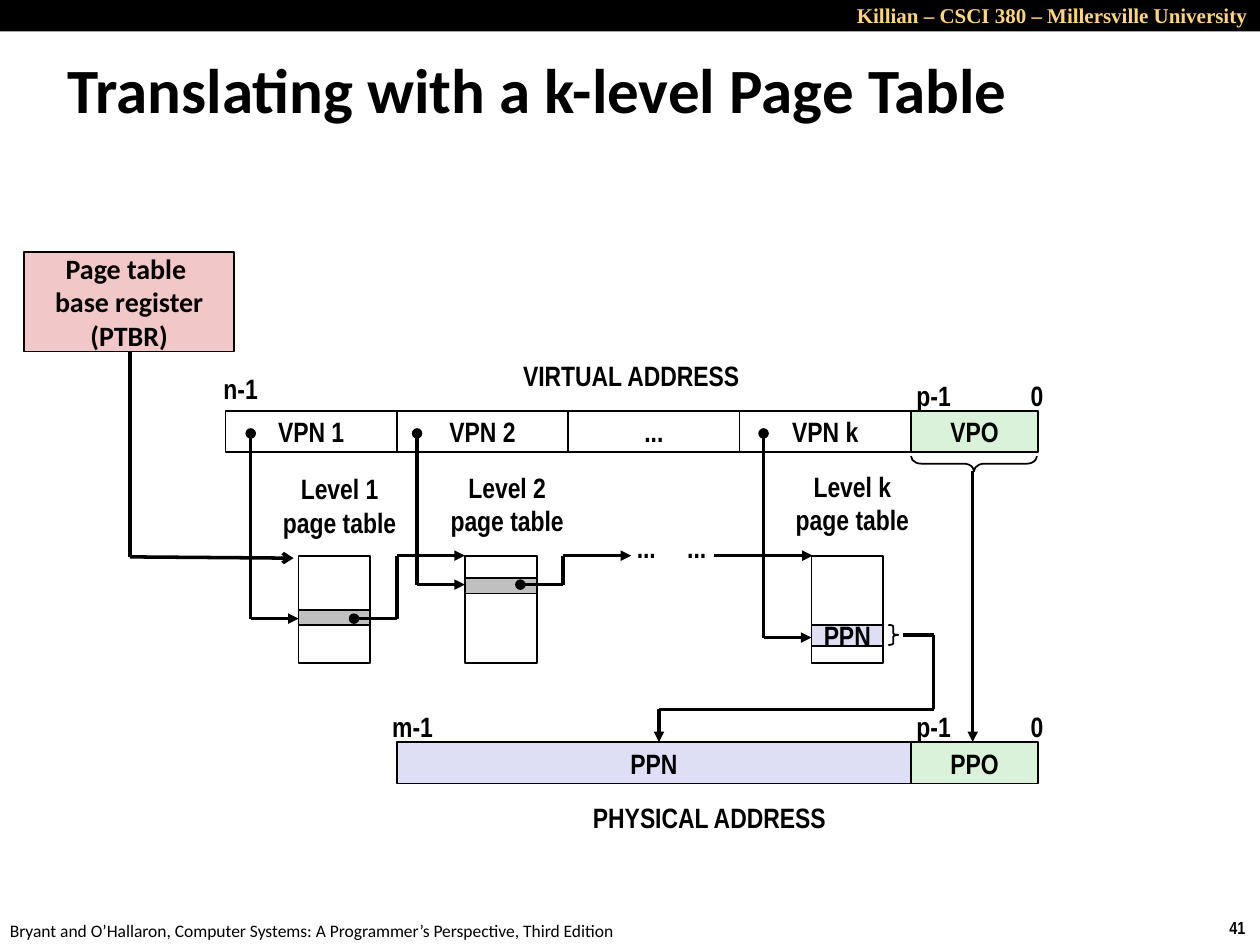
from dataclasses import dataclass
from itertools import pairwise

import lxml.etree
import pptx
import pptx.dml.color
import pptx.enum.shapes
import pptx.enum.text
import pptx.oxml.ns
import pptx.util

Inches = pptx.util.Inches
Pt = pptx.util.Pt
Align = pptx.enum.text.PP_ALIGN
Anchor = pptx.enum.text.MSO_ANCHOR
Shape = pptx.enum.shapes.MSO_SHAPE
qn = pptx.oxml.ns.qn

COLORS = {
    "black": "000000",
    "gold": "FFD579",
    "pink": "F1C7C7",
    "green": "DBF2DA",
    "lavender": "DEDFF5",
    "gray": "C0C0C0",
}


@dataclass
class Style:
    font: str = "Arial Narrow"
    size: float = 16
    bold: bool = True
    color: str = "black"
    align: Align = Align.CENTER
    anchor: Anchor = Anchor.MIDDLE
    wrap: bool = False


@dataclass
class Level:
    name: str
    field_left: float
    table_left: float
    label_left: float
    label_top: float
    entry_top: float
    entry_height: float
    pointer_y: float
    entry_fill: str = "gray"
    entry_text: str = ""


LABEL = Style()
FIELD_TOP, PHYSICAL_TOP, FIELD_HEIGHT = 3.26, 5.89, 0.33
FIELD_LEFT, FIELD_WIDTH = 1.79, 1.36
OFFSET_LEFT, OFFSET_WIDTH = 7.23, 1.01
TABLE_TOP, TABLE_WIDTH, TABLE_HEIGHT = 4.41, 0.57, 0.85
POINTER_TOP = 3.44
LEVELS = [
    Level("1", 1.79, 2.37, 2.14, 3.69, 4.84, 0.12, 4.91),
    Level("2", 3.15, 3.69, 3.47, 3.68, 4.59, 0.12, 4.64),
    Level("k", 5.87, 6.44, 6.21, 3.67, 4.96, 0.17, 5.06, "lavender", "PPN"),
]


def rgb(name: str) -> pptx.dml.color.RGBColor:
    return pptx.dml.color.RGBColor.from_string(COLORS[name])


def write_text(shape, text: str, style: Style) -> None:
    """Write paragraphs split by newline; a vertical tab breaks a line."""
    frame = shape.text_frame
    frame.word_wrap = style.wrap
    frame.vertical_anchor = style.anchor
    for index, content in enumerate(text.split("\n")):
        paragraph = frame.add_paragraph() if index else frame.paragraphs[0]
        paragraph.alignment = style.align
        for part, words in enumerate(content.split("\v")):
            if part:
                paragraph.add_line_break()
            run = paragraph.add_run()
            run.text = words
            run.font.name = style.font
            run.font.size = Pt(style.size)
            run.font.bold = style.bold
            run.font.color.rgb = rgb(style.color)


def add_label(slide, left: float, top: float, width: float, height: float,
              text: str, style: Style = LABEL) -> None:
    box = slide.shapes.add_textbox(Inches(left), Inches(top), Inches(width), Inches(height))
    write_text(box, text, style)


def add_box(slide, left: float, top: float, width: float, height: float,
            fill: str = "", text: str = "", style: Style = LABEL,
            kind: Shape = Shape.RECTANGLE):
    shape = slide.shapes.add_shape(
        kind, Inches(left), Inches(top), Inches(width), Inches(height))
    shape.shadow.inherit = False
    if fill:
        shape.fill.solid()
        shape.fill.fore_color.rgb = rgb(fill)
    else:
        shape.fill.background()
    shape.line.color.rgb = rgb("black")
    shape.line.width = Pt(1)
    if text:
        write_text(shape, text, style)
    return shape


def add_brace(slide, left: float, top: float, width: float, height: float,
              curve: float, rotation: float = 0) -> None:
    brace = add_box(slide, left, top, width, height, kind=Shape.RIGHT_BRACE)
    brace.adjustments[0] = curve
    brace.rotation = rotation


def add_route(slide, points: list[tuple[float, float]], head: str = "",
              tail: str = "triangle") -> None:
    """Join the points with straight lines, ending the route in an arrowhead."""
    segments = list(pairwise(points))
    for index, (start, end) in enumerate(segments):
        line = slide.shapes.add_connector(
            pptx.enum.shapes.MSO_CONNECTOR.STRAIGHT, *map(Inches, start + end))
        line.line.color.rgb = rgb("black")
        line.line.width = Pt(2)
        outline = line.line._get_or_add_ln()
        if head and index == 0:
            lxml.etree.SubElement(outline, qn("a:headEnd"), type=head)
        if tail and index == len(segments) - 1:
            lxml.etree.SubElement(outline, qn("a:tailEnd"), type=tail)
        lxml.etree.SubElement(line._element.spPr, qn("a:effectLst"))


def add_level(slide, level: Level) -> None:
    pointer_x = level.table_left - 0.38
    add_box(slide, level.field_left, FIELD_TOP, FIELD_WIDTH, FIELD_HEIGHT,
            text=f"VPN {level.name}")
    add_box(slide, level.table_left, TABLE_TOP, TABLE_WIDTH, TABLE_HEIGHT)
    add_box(slide, level.table_left, level.entry_top, TABLE_WIDTH,
            level.entry_height, level.entry_fill, level.entry_text)
    add_route(slide, [(pointer_x, POINTER_TOP), (pointer_x, level.pointer_y),
                      (level.table_left, level.pointer_y)], head="oval")
    add_label(slide, level.label_left, level.label_top, 1.11, 0.64,
              f"Level {level.name}\npage table")


def add_page_frame(slide) -> None:
    small = Style(size=10, align=Align.LEFT, anchor=Anchor.TOP)
    add_label(slide, 9.66, 7.23, 0.34, 0.27, "41", small)
    add_label(slide, -0.02, 7.25, 5.08, 0.27,
              "Bryant and O’Hallaron, Computer Systems: A Programmer’s Perspective, Third Edition",
              Style("Calibri", 10, False, align=Align.LEFT, anchor=Anchor.TOP))
    banner = add_box(slide, 0, 0, 10, 0.25, "black")
    banner.line.fill.background()
    add_label(slide, 6.69, -0.03, 3.31, 0.3, "Killian – CSCI 380 – Millersville University",
              Style("Times New Roman", 12, color="gold", align=Align.RIGHT,
                    anchor=Anchor.TOP, wrap=True))
    add_label(slide, 0.44, 0.27, 9.06, 0.86, "Translating with a k-level Page Table",
              Style("Calibri", 36, align=Align.LEFT, wrap=True))


def main() -> None:
    presentation = pptx.Presentation()
    presentation.slide_width, presentation.slide_height = Inches(10), Inches(7.5)
    slide = presentation.slides.add_slide(presentation.slide_layouts[6])
    add_page_frame(slide)

    # Base register pointing at the first table
    add_box(slide, 0.19, 2, 1.67, 0.79, "pink", "Page table \vbase register\n(PTBR)",
            Style("Calibri", wrap=True))
    add_route(slide, [(1.03, 2.79), (1.03, 4.42), (2.33, 4.43)], tail="arrow")

    # Virtual address fields and page tables
    add_box(slide, FIELD_LEFT + 2 * FIELD_WIDTH, FIELD_TOP, FIELD_WIDTH, FIELD_HEIGHT, text="...")
    for level in LEVELS:
        add_level(slide, level)

    # Physical page number, and the offset shared by both addresses
    add_box(slide, 3.15, PHYSICAL_TOP, 4.08, FIELD_HEIGHT, "lavender", "PPN")
    for top, name in ((FIELD_TOP, "VPO"), (PHYSICAL_TOP, "PPO")):
        add_box(slide, OFFSET_LEFT, top, OFFSET_WIDTH, FIELD_HEIGHT, "green", name)
        add_label(slide, 7.17, top - 0.31, 0.48, 0.37, "p-1")
        add_label(slide, 8.08, top - 0.31, 0.3, 0.37, "0")
    add_label(slide, 1.67, 2.9, 0.48, 0.37, "n-1")
    add_label(slide, 3.01, 5.58, 0.53, 0.37, "m-1")
    add_label(slide, 4.04, 2.79, 1.94, 0.37, "VIRTUAL ADDRESS")
    add_label(slide, 4.59, 6.3, 2.08, 0.37, "PHYSICAL ADDRESS")

    # Links from each table entry to the next table
    for level in LEVELS[:2]:
        start, turn = level.table_left + 0.44, level.table_left + 0.78
        add_route(slide, [(start, level.pointer_y), (turn, level.pointer_y),
                          (turn, TABLE_TOP), (turn + 0.54, TABLE_TOP)], head="oval")
    for left in (4.95, 5.35):
        add_label(slide, left, 4.16, 0.36, 0.37, "...")
    add_route(slide, [(5.67, TABLE_TOP), (6.45, TABLE_TOP)])

    # Results carried into the physical address
    add_route(slide, [(7.72, 3.74), (7.72, PHYSICAL_TOP)])
    add_route(slide, [(7.17, 5.04), (7.41, 5.04), (7.41, 5.63), (5.23, 5.63),
                      (5.23, PHYSICAL_TOP)])
    add_brace(slide, 7.67, 3.18, 0.12, 1, 0.68, rotation=90)
    add_brace(slide, 7.05, 4.96, 0.08, 0.16, 0.16)

    presentation.save("out.pptx")


if __name__ == "__main__":
    main()
